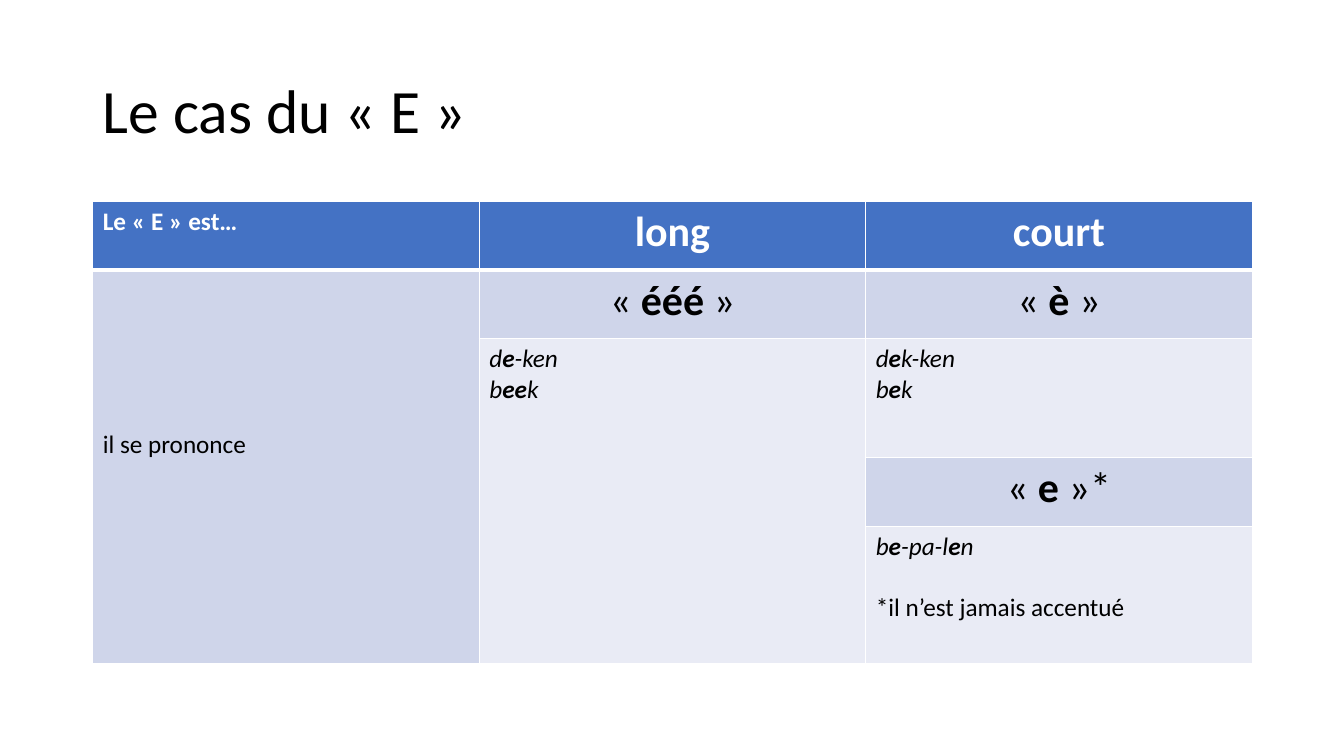
"""Build a slide with a table on how the Dutch letter E is pronounced."""
from lxml import etree
from pptx import Presentation
from pptx.dml.color import RGBColor
from pptx.enum import text
from pptx.oxml.ns import qn
from pptx.util import Inches, Pt

COLORS = {"head": "4472C4", "sound": "CFD5EA", "example": "E9EBF5",
          "white": "FFFFFF", "black": "000000"}
TITLE = "Le cas du « E »"
FONT = "Calibri"
LEFT, WIDTH = 0.92, 11.5
ROWS = [0.68, 0.68, 1.18, 0.68, 1.36]
COLUMNS = 3
MERGES = [((1, 0), (4, 0)), ((2, 1), (4, 1))]

# Each "|" switches bold on or off.
STYLES = {
    "corner": dict(size=18, color="white", fill="head"),
    "head": dict(size=30, color="white", fill="head", center=True),
    "label": dict(size=18, fill="sound", top=1.58),
    "sound": dict(size=30, fill="sound", center=True),
    "example": dict(size=18, fill="example", italic=True),
}
CELLS = {
    (0, 0): ("corner", ["|Le « E » est…"]),
    (0, 1): ("head", ["|long"]),
    (0, 2): ("head", ["|court"]),
    (1, 0): ("label", ["il se prononce"]),
    (1, 1): ("sound", ["« |ééé| »"]),
    (1, 2): ("sound", ["« |è| »"]),
    (2, 1): ("example", ["d|e|-ken", "b|ee|k"]),
    (2, 2): ("example", ["d|e|k-ken", "b|e|k"]),
    (3, 2): ("sound", ["« |e| »*"]),
    (4, 2): ("example", ["b|e|-pa-l|e|n", "*il n’est jamais accentué"]),
}


def rgb(name):
    return RGBColor.from_string(COLORS[name])


def write(p, line, size, color="black", italic=False):
    p.font.name, p.font.size, p.font.italic = FONT, Pt(size), italic
    p.font.color.rgb = rgb(color)
    for i, part in enumerate(line.split("|")):
        if part:
            r = p.add_run()
            r.text, r.font.bold = part, i % 2 == 1


def add_borders(cell, row):
    tc_pr = cell._tc.get_or_add_tcPr()
    widths = {"L": 1, "R": 1, "T": 3 if row == 1 else 1, "B": 3 if row == 0 else 1}
    for i, (side, width) in enumerate(widths.items()):
        ln = etree.Element(qn(f"a:ln{side}"), w=str(Pt(width)))
        fill = etree.SubElement(ln, qn("a:solidFill"))
        etree.SubElement(fill, qn("a:srgbClr"), val=COLORS["white"])
        tc_pr.insert(i, ln)


def fill_cell(cell, style, lines):
    cell.fill.solid()
    cell.fill.fore_color.rgb = rgb(style["fill"])
    cell.margin_top = Inches(style.get("top", 0.05))
    tf = cell.text_frame
    for i, line in enumerate(lines):
        p = tf.add_paragraph() if i else tf.paragraphs[0]
        note = line.startswith("*")
        if style.get("center"):
            p.alignment = text.PP_ALIGN.CENTER
        if note:
            p.space_before = Pt(22)
        write(p, line, style["size"], style.get("color", "black"),
              style.get("italic", False) and not note)


def main():
    prs = Presentation()
    prs.slide_width, prs.slide_height = Inches(13.33), Inches(7.5)
    slide = prs.slides.add_slide(prs.slide_layouts[6])

    sp = slide.shapes.add_textbox(Inches(LEFT), Inches(0.4), Inches(WIDTH), Inches(1.45))
    tf = sp.text_frame
    tf.word_wrap = True
    tf.vertical_anchor = text.MSO_ANCHOR.MIDDLE
    tf.paragraphs[0].line_spacing = 0.9
    write(tf.paragraphs[0], TITLE, 44)

    table = slide.shapes.add_table(len(ROWS), COLUMNS, Inches(LEFT), Inches(2),
                                   Inches(WIDTH), Inches(sum(ROWS))).table
    table.first_row = table.horz_banding = False
    for column in table.columns:
        column.width = Inches(WIDTH / COLUMNS)
    for row, height in zip(table.rows, ROWS):
        row.height = Inches(height)
    for first, last in MERGES:
        table.cell(*first).merge(table.cell(*last))
    for (row, col), (kind, lines) in CELLS.items():
        fill_cell(table.cell(row, col), STYLES[kind], lines)
    for row in range(len(ROWS)):
        for col in range(COLUMNS):
            add_borders(table.cell(row, col), row)

    prs.save("out.pptx")


if __name__ == "__main__":
    main()
